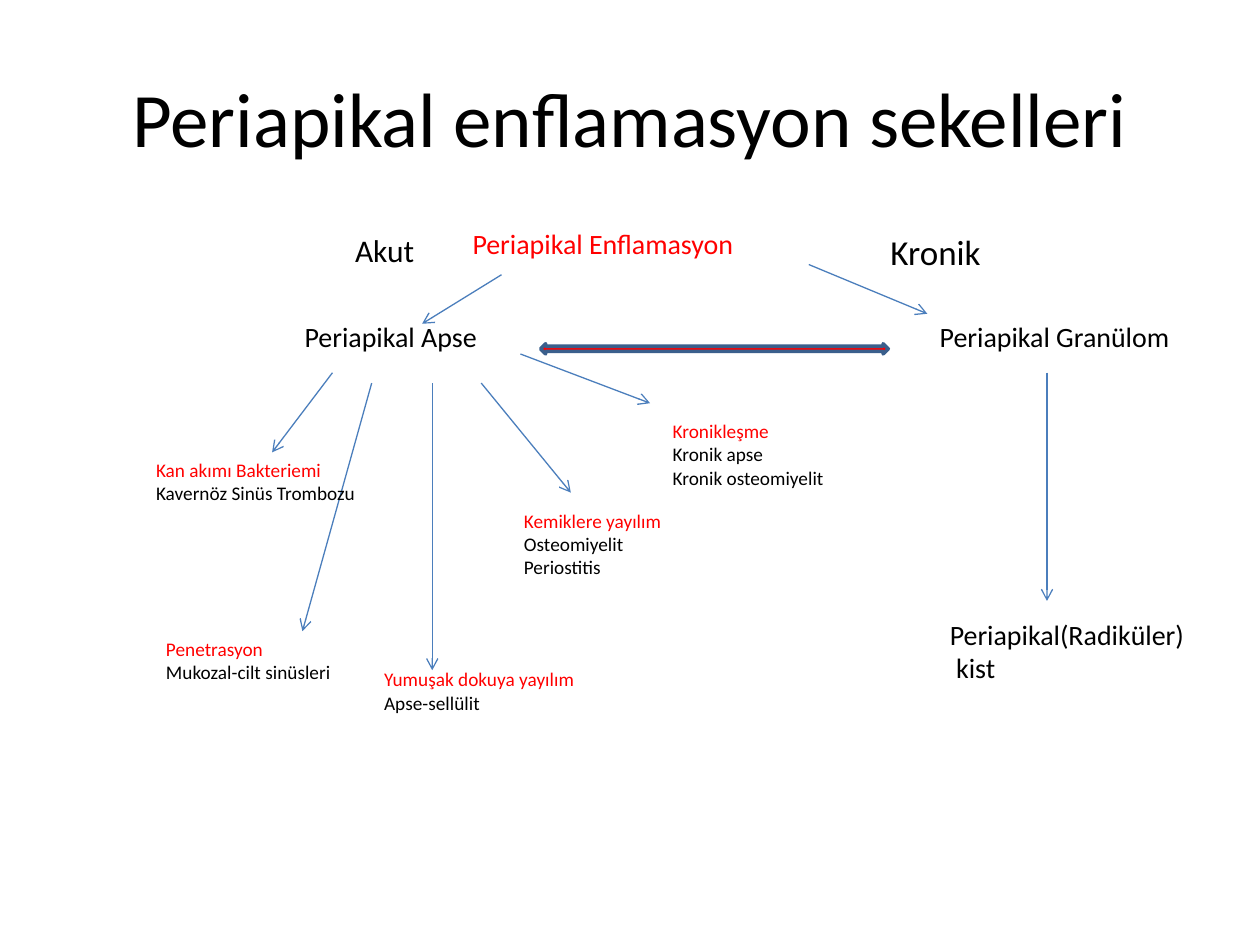
from lxml.etree import SubElement
from pptx import Presentation
from pptx.dml.color import RGBColor
from pptx.enum.shapes import MSO_CONNECTOR as Connector, MSO_SHAPE as Shape
from pptx.enum.text import MSO_ANCHOR as Anchor, MSO_AUTO_SIZE as AutoSize, PP_ALIGN as Align
from pptx.oxml.ns import qn
from pptx.util import Pt

BLACK = RGBColor(0x00, 0x00, 0x00)
RED = RGBColor(0xFF, 0x00, 0x00)
BLUE = RGBColor(0x4B, 0x7E, 0xBC)
DARK_BLUE = RGBColor(0x3A, 0x5F, 0x8C)


class Diagram:
    """Style and current slide; all lengths are in points."""

    font_name = "Calibri"
    label_size = 16
    detail_size = 11

    def __init__(self, slide):
        self.slide = slide

    def style(self, paragraph, size, color=BLACK):
        formats = {"name": self.font_name, "size": Pt(size)}
        for attribute, value in formats.items():
            setattr(paragraph.font, attribute, value)
        paragraph.font.color.rgb = color

    def place(self, shape, left, top, width, height):
        box = {"left": left, "top": top, "width": width, "height": height}
        for attribute, value in box.items():
            setattr(shape, attribute, Pt(value))

    def title(self, text, *box):
        heading = self.slide.shapes.title
        self.place(heading, *box)
        frame = heading.text_frame
        frame.text = text
        frame.vertical_anchor = Anchor.MIDDLE
        frame.paragraphs[0].alignment = Align.CENTER
        self.style(frame.paragraphs[0], 44)

    def body(self, text, indent, *box):
        """Fill the body placeholder with one indented line without a bullet."""
        content = self.slide.placeholders[1]
        self.place(content, *box)
        frame = content.text_frame
        frame.text = text
        frame.auto_size = AutoSize.NONE
        root = frame.paragraphs[0]
        root.alignment = Align.JUSTIFY
        root.space_before = Pt(0)
        properties = root._p.get_or_add_pPr()
        properties.set("marL", str(Pt(indent)))
        properties.set("indent", "0")
        SubElement(properties, qn("a:buNone"))
        self.style(root, self.label_size, RED)

    def label(self, lines, left, top, width, height, size=label_size, first_color=BLACK):
        box = self.slide.shapes.add_textbox(Pt(left), Pt(top), Pt(width), Pt(height))
        frame = box.text_frame
        frame.word_wrap = True
        frame.text = "\n".join(lines)
        for index, paragraph in enumerate(frame.paragraphs):
            self.style(paragraph, size, BLACK if index else first_color)

    def outcome(self, lines, *box):
        """A red heading with its details in black."""
        self.label(lines, *box, size=self.detail_size, first_color=RED)

    def arrow(self, *ends):
        connector = self.slide.shapes.add_connector(
            Connector.STRAIGHT, *(Pt(value) for value in ends))
        connector.line.color.rgb = BLUE
        connector.line.width = Pt(0.75)
        SubElement(connector.line._get_or_add_ln(), qn("a:tailEnd"), type="arrow")
        SubElement(connector._element.spPr, qn("a:effectLst"))

    def double_arrow(self, *box):
        exchange = self.slide.shapes.add_shape(
            Shape.LEFT_RIGHT_ARROW, *(Pt(value) for value in box))
        exchange.shadow.inherit = False
        exchange.fill.solid()
        exchange.fill.fore_color.rgb = RED
        exchange.line.color.rgb = DARK_BLUE
        exchange.line.width = Pt(2)


def main():
    deck = Presentation()
    deck.slide_width, deck.slide_height = Pt(720), Pt(540)
    diagram = Diagram(deck.slides.add_slide(deck.slide_layouts[1]))

    diagram.title("Periapikal enflamasyon sekelleri", 36, 21.6, 648, 90)
    diagram.body("Periapikal Enflamasyon", 226.8, 36, 126, 648, 356.4)

    diagram.label(["Akut"], 195.8, 128.2, 49, 29, size=18)
    diagram.label(["Kronik"], 501.8, 128.2, 67.7, 31.5, size=20)
    diagram.label(["Periapikal Apse"], 167, 179.3, 121.7, 26.6)
    diagram.label(["Periapikal Granülom"], 529.9, 179.3, 156.2, 26.6)
    diagram.label(["Periapikal(Radiküler)", " kist"], 535.7, 349.2, 160.6, 46)

    arrows = [
        (286.6, 157, 241.2, 185),      # inflammation to abscess
        (462.2, 151.2, 529.9, 179.3),  # inflammation to granuloma
        (598.3, 213, 598.3, 343.4),    # granuloma to cyst
        (190, 213, 155.5, 258.5),      # abscess to its five outcomes
        (212.4, 218.9, 172.8, 360.7),
        (247, 218.9, 247, 383),
        (275, 218.9, 326.2, 281.5),
        (297.4, 202.3, 371.5, 230.4),
    ]
    for ends in arrows:
        diagram.arrow(*ends)

    outcomes = [
        (["Kan akımı Bakteriemi", "Kavernöz Sinüs Trombozu"], 82.1, 258.5, 141.8, 33.8),
        (["Penetrasyon", "Mukozal-cilt sinüsleri"], 87.8, 360.7, 115.2, 33.8),
        (["Yumuşak dokuya yayılım", "Apse-sellülit"], 212.4, 378, 135.4, 33.8),
        (["Kemiklere yayılım", "Osteomiyelit", "Periostitis"], 292.3, 287.3, 100, 47.5),
        (["Kronikleşme", "Kronik apse", "Kronik osteomiyelit"], 377.3, 236.2, 107.3, 47.5),
    ]
    for lines, *box in outcomes:
        diagram.outcome(lines, *box)

    diagram.double_arrow(308.9, 196.4, 198.7, 5.8)
    deck.save("out.pptx")


if __name__ == "__main__":
    main()
